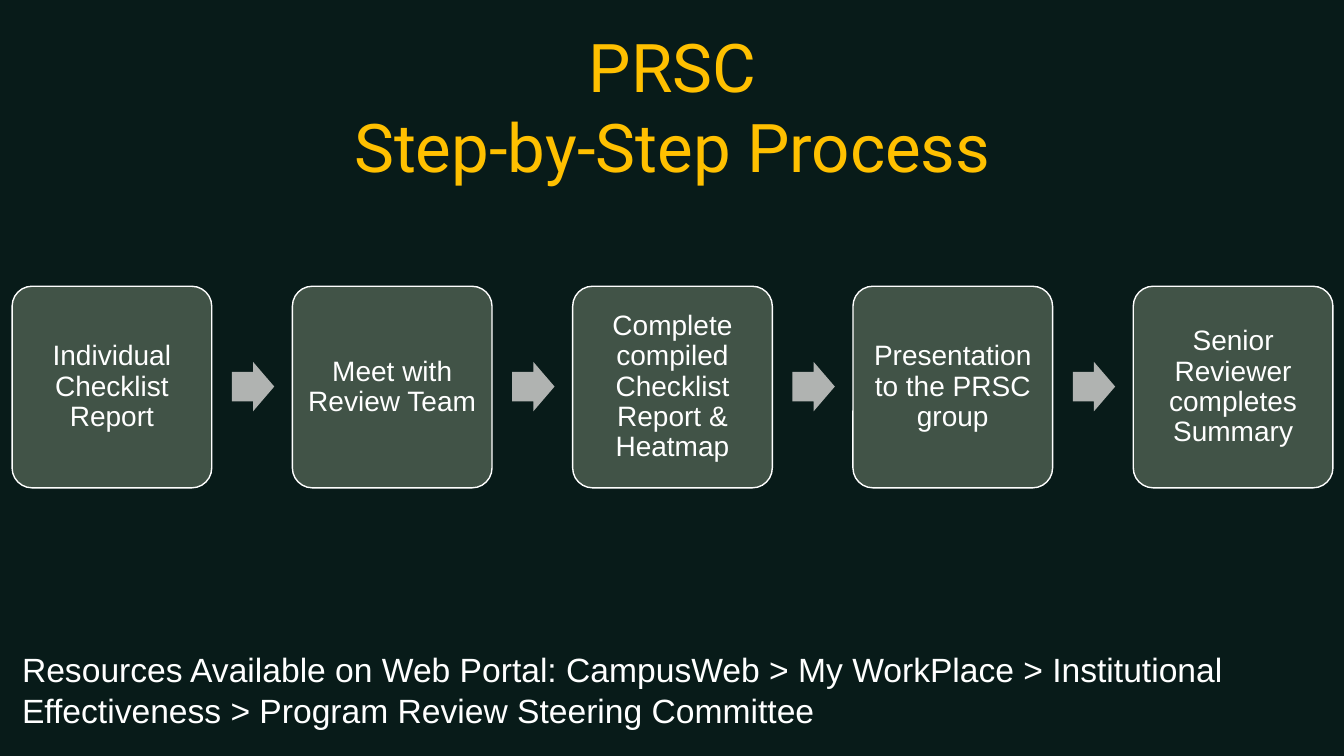
from pptx import Presentation
from pptx import util as u
from pptx.dml import color
from pptx.enum import shapes, text

PX = 9144
STEPS = [
    "Individual Checklist Report",
    "Meet with Review Team",
    "Complete compiled Checklist Report & Heatmap",
    "Presentation to the PRSC group",
    "Senior Reviewer completes Summary",
]


def rgb(code):
    return color.RGBColor.from_string(code)


class Deck:
    """Holds the style and the current slide, and draws each kind of element."""

    ink, gold, green, gray, dark = "FFFFFF", "FFC000", "415347", "B0B3B1", "081B19"

    def __init__(self, wide, high):
        self.prs = Presentation()
        self.prs.slide_width, self.prs.slide_height = wide * PX, high * PX
        self.slide = self.prs.slides.add_slide(self.prs.slide_layouts[6])
        fill = self.slide.background.fill
        fill.solid()
        fill.fore_color.rgb = rgb(self.dark)

    def letter(self, shape, lines, size, hue, face="Arial", frame=None, para=None):
        body = shape.text_frame
        body.word_wrap = True
        for name, value in (frame or {}).items():
            setattr(body, name, value)
        body.text = "\n".join(lines)
        for item in body.paragraphs:
            for name, value in (para or {}).items():
                setattr(item, name, value)
            font = item.runs[0].font
            for name, value in {"size": u.Pt(size), "name": face}.items():
                setattr(font, name, value)
            font.color.rgb = rgb(hue)

    def shape(self, kind, box, fill, adjust, line=None):
        item = self.slide.shapes.add_shape(kind, *(n * PX for n in box))
        item.shadow.inherit = False
        item.fill.solid()
        item.fill.fore_color.rgb = rgb(fill)
        for i, value in enumerate(adjust):
            item.adjustments[i] = value
        if line:
            item.line.color.rgb = rgb(line)
            item.line.width = u.Pt(1)
        else:
            item.line.fill.background()
        return item

    def step(self, left, label):
        card = self.shape(shapes.MSO_SHAPE.ROUNDED_RECTANGLE,
                          (left, 284, 198, 200), self.green, [0.1], self.ink)
        sides = ("left", "right", "top", "bottom")
        frame = {f"margin_{side}": 8 * PX for side in sides}
        frame["vertical_anchor"] = text.MSO_ANCHOR.MIDDLE
        para = {"alignment": text.PP_ALIGN.CENTER, "line_spacing": 0.9}
        self.letter(card, [label], 20, self.ink, frame=frame, para=para)

    def arrow(self, left):
        self.shape(shapes.MSO_SHAPE.RIGHT_ARROW, (left, 359, 42, 49),
                   self.gray, [0.6, 0.5])

    def label(self, box, lines, size, hue, **style):
        item = self.slide.shapes.add_textbox(*(n * PX for n in box))
        self.letter(item, lines, size, hue, **style)


def main():
    deck = Deck(1333, 750)
    first, pitch = 12, 278
    for i, name in enumerate(STEPS):
        left = first + i * pitch
        deck.step(left, name)
        if i < len(STEPS) - 1:
            deck.arrow(left + 218)
    deck.label((179, 20, 976, 172), ["PRSC", "Step-by-Step Process"], 48,
               deck.gold, face="Roboto",
               para={"alignment": text.PP_ALIGN.CENTER})
    deck.label((12, 639, 1321, 91),
               ["Resources Available on Web Portal: CampusWeb > My WorkPlace > "
                "Institutional Effectiveness > Program Review Steering Committee"],
               24, deck.ink)
    deck.prs.save("out.pptx")


if __name__ == "__main__":
    main()
